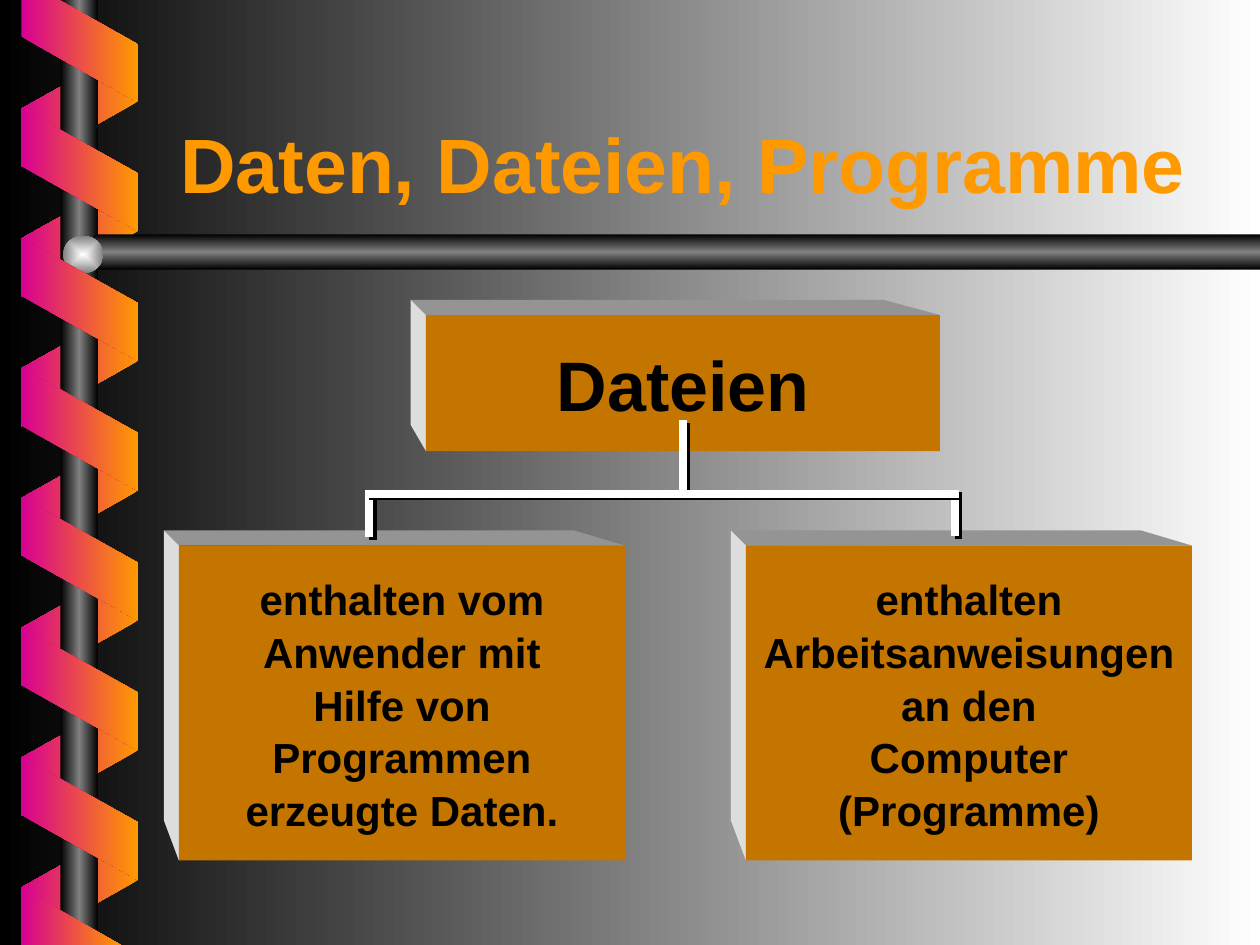
from dataclasses import dataclass

from lxml.etree import SubElement
from pptx import Presentation
from pptx.dml.color import RGBColor
from pptx.enum.shapes import MSO_CONNECTOR, MSO_SHAPE as Preset
from pptx.enum.text import MSO_ANCHOR, MSO_AUTO_SIZE, PP_ALIGN
from pptx.oxml.ns import qn
from pptx.util import Inches, Pt

BLACK = RGBColor(0x00, 0x00, 0x00)
WHITE = RGBColor(0xFF, 0xFF, 0xFF)
GRAY = RGBColor(0x80, 0x80, 0x80)
ORANGE = RGBColor(0xFF, 0x99, 0x00)
MAGENTA = RGBColor(0xD6, 0x00, 0x93)
BOX_FRONT = RGBColor(0xC4, 0x75, 0x00)
BOX_TOP = RGBColor(0x94, 0x94, 0x94)
BOX_SIDE = RGBColor(0xDD, 0xDD, 0xDD)

FONT = "Arial"
RIBBON_PITCH = 1.03
BOX_DEPTH = 0.12
BACK_SCALE = 0.92


@dataclass(frozen=True)
class Box:
    left: float
    top: float
    width: float
    height: float
    size: int
    lines: tuple[str, ...]
    spacing: float = 1.0


@dataclass(frozen=True)
class Branch:
    start: tuple[float, float]
    end: tuple[float, float]
    shadow_distance: float = 2.8
    shadow_angle: int = 45


BOXES = (
    Box(3.38, 2.5, 4.08, 1.08, 40, ("Dateien",)),
    Box(1.42, 4.33, 3.54, 2.5, 24,
        ("enthalten vom", "Anwender mit", "Hilfe von", "Programmen", "erzeugte Daten."), 1.05),
    Box(5.92, 4.33, 3.54, 2.5, 24,
        ("enthalten", "Arbeitsanweisungen", "an den", "Computer", "(Programme)"), 1.05),
)

BRANCHES = (
    Branch((5.42, 3.33), (5.42, 3.92)),
    Branch((2.93, 3.91), (2.93, 4.26)),
    Branch((7.58, 3.9), (7.58, 4.25)),
    Branch((5.42, 3.92), (2.9, 3.92), 2.2, 27),
    Branch((5.42, 3.92), (7.61, 3.92), 2.2, 27),
)


def set_gradient(fill, element, colors: tuple[RGBColor, ...], angle: int = 0) -> None:
    fill.gradient()
    fill.gradient_angle = angle
    gradient = next(element.iter(qn("a:gradFill")))
    gradient.set("rotWithShape", "0")
    stops = gradient.find(qn("a:gsLst"))
    for stop in list(stops):
        stops.remove(stop)
    for index, color in enumerate(colors):
        position = 100000 * index // (len(colors) - 1)
        stop = SubElement(stops, qn("a:gs"), pos=str(position))
        SubElement(stop, qn("a:srgbClr"), val=str(color))


def add_plain_shape(slide, preset, left: float, top: float, width: float, height: float):
    shape = slide.shapes.add_shape(
        preset, Inches(left), Inches(top), Inches(width), Inches(height))
    shape.shadow.inherit = False
    shape.line.fill.background()
    return shape


def add_polygon(slide, points: list[tuple[float, float]]):
    corners = [(Inches(x), Inches(y)) for x, y in points]
    builder = slide.shapes.build_freeform(*corners[0])
    builder.add_line_segments(corners[1:], close=True)
    polygon = builder.convert_to_shape()
    polygon.shadow.inherit = False
    polygon.line.fill.background()
    return polygon


def flip_horizontally(shape) -> None:
    next(shape.element.iter(qn("a:xfrm"))).set("flipH", "1")


def add_ribbon(slide, first_top: float, count: int, rotation: int,
               colors: tuple[RGBColor, ...], flipped: bool) -> None:
    for index in range(count):
        band = add_plain_shape(slide, Preset.PARALLELOGRAM, 0.14,
                               first_top + index * RIBBON_PITCH, 0.98, 0.93)
        band.adjustments[0] = 0.56
        band.rotation = rotation
        if flipped:
            flip_horizontally(band)
        set_gradient(band.fill, band.element, colors)


def add_rods(slide) -> None:
    metal = (BLACK, GRAY, BLACK)
    upright = add_plain_shape(slide, Preset.RECTANGLE, 0.48, 0, 0.3, 7.5)
    set_gradient(upright.fill, upright.element, metal)

    crossbar = add_plain_shape(slide, Preset.PENTAGON, 0.6, 1.86, 9.4, 0.28)
    crossbar.adjustments[0] = 0.59
    flip_horizontally(crossbar)
    set_gradient(crossbar.fill, crossbar.element, metal, 90)

    knob = add_plain_shape(slide, Preset.OVAL, 0.5, 1.87, 0.32, 0.3)
    set_gradient(knob.fill, knob.element, (WHITE, GRAY))
    gradient = next(knob.element.iter(qn("a:gradFill")))
    gradient.remove(gradient.find(qn("a:lin")))
    radial = SubElement(gradient, qn("a:path"), path="shape")
    SubElement(radial, qn("a:fillToRect"), l="50000", t="50000", r="50000", b="50000")


def add_ribbon_ends(slide) -> None:
    upper_end = [(0.17, 0), (0.17, 0.29), (1.09, 0.81), (1.09, 0.35), (0.47, 0)]
    lower_end = [(0.96, 7.5), (0.17, 7.05), (0.17, 7.5)]
    for points in (upper_end, lower_end):
        end = add_polygon(slide, points)
        set_gradient(end.fill, end.element, (MAGENTA, ORANGE))


def add_box(slide, box: Box) -> None:
    right, bottom = box.left + box.width, box.top + box.height
    back_left, back_top = box.left - BOX_DEPTH, box.top - BOX_DEPTH
    back_right = back_left + box.width * BACK_SCALE
    back_bottom = back_top + box.height * BACK_SCALE
    back_corner, front_corner = (back_left, back_top), (box.left, box.top)
    faces = (
        (BOX_TOP, [back_corner, (back_right, back_top), (right, box.top), front_corner]),
        (BOX_SIDE, [back_corner, front_corner, (box.left, bottom), (back_left, back_bottom)]),
    )
    for color, points in faces:
        face = add_polygon(slide, points)
        face.fill.solid()
        face.fill.fore_color.rgb = color

    front = add_plain_shape(slide, Preset.RECTANGLE, box.left, box.top, box.width, box.height)
    front.fill.solid()
    front.fill.fore_color.rgb = BOX_FRONT
    frame = front.text_frame
    frame.word_wrap = False
    frame.vertical_anchor = MSO_ANCHOR.MIDDLE
    frame.text = "\n".join(box.lines)
    for paragraph in frame.paragraphs:
        paragraph.alignment = PP_ALIGN.CENTER
        paragraph.line_spacing = box.spacing
        style_font(paragraph.font, box.size, BLACK)


def style_font(font, size: int, color: RGBColor) -> None:
    font.name = FONT
    font.size = Pt(size)
    font.bold = True
    font.color.rgb = color


def add_branch(slide, branch: Branch) -> None:
    line = slide.shapes.add_connector(
        MSO_CONNECTOR.STRAIGHT, *map(Inches, branch.start + branch.end))
    line.line.color.rgb = WHITE
    line.line.width = Pt(4.5)
    effects = SubElement(line.element.spPr, qn("a:effectLst"))
    shadow = SubElement(effects, qn("a:outerShdw"), dist=str(Pt(branch.shadow_distance)),
                        dir=str(branch.shadow_angle * 60000), algn="ctr", rotWithShape="0")
    SubElement(shadow, qn("a:srgbClr"), val=str(BLACK))


def add_title(slide) -> None:
    title = slide.shapes.title
    title.left, title.top = Inches(1.33), Inches(0.46)
    title.width, title.height = Inches(8.5), Inches(1.25)
    frame = title.text_frame
    frame.text = "Daten, Dateien, Programme"
    frame.auto_size = MSO_AUTO_SIZE.NONE
    frame.vertical_anchor = MSO_ANCHOR.BOTTOM
    heading = frame.paragraphs[0]
    heading.alignment = PP_ALIGN.LEFT
    style_font(heading.font, 44, ORANGE)


def main() -> None:
    deck = Presentation()
    deck.slide_width, deck.slide_height = Inches(10), Inches(7.5)
    slide = deck.slides.add_slide(deck.slide_layouts[5])
    set_gradient(slide.background.fill, slide.element, (BLACK, WHITE))
    add_ribbon(slide, 0.37, 7, 90, (ORANGE, MAGENTA), True)
    add_rods(slide)
    add_ribbon(slide, 0.88, 6, 270, (MAGENTA, ORANGE), False)
    add_ribbon_ends(slide)
    add_title(slide)
    for box in BOXES:
        add_box(slide, box)
    for branch in BRANCHES:
        add_branch(slide, branch)
    deck.save("out.pptx")


if __name__ == "__main__":
    main()
